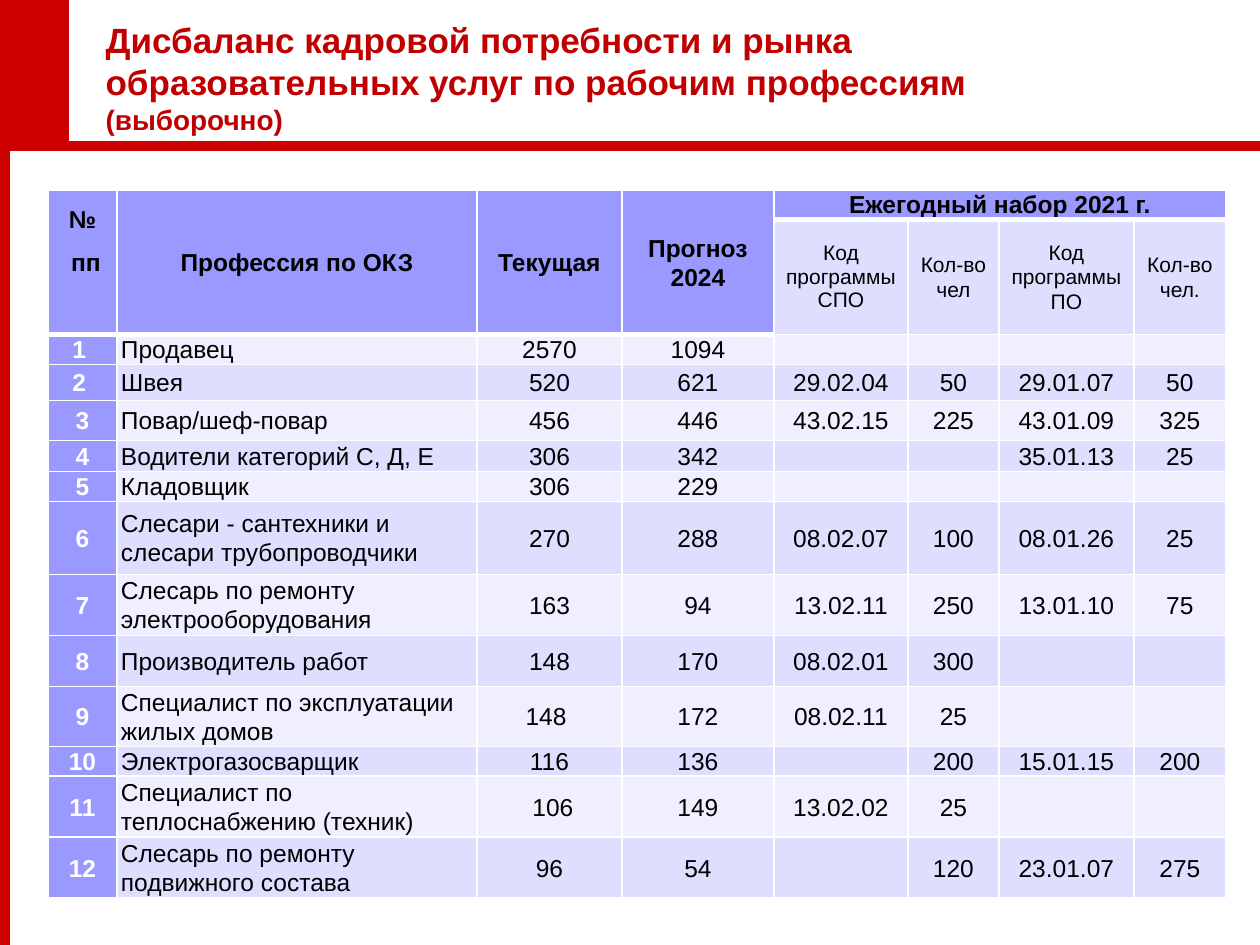
from lxml import etree
from pptx import Presentation
from pptx import util as u
from pptx.dml.color import RGBColor
from pptx.enum import shapes, text
from pptx.oxml.ns import qn


def px(n):
    return u.Emu(round(n * 914400 / 126))


def color(hex_string):
    return RGBColor.from_string(hex_string)


RED, TITLE_RED = "CC0000", "C00000"
HEADER, DARK_BAND, LIGHT_BAND = "9999FF", "DEDEFF", "EFEFFF"
BLACK, WHITE = "000000", "FFFFFF"

presentation = Presentation()
presentation.slide_width, presentation.slide_height = px(1260), px(945)
slide = presentation.slides.add_slide(presentation.slide_layouts[5])

# Red frame: side bar, corner block and rule
for width, height in [(10, 945), (69, 143)]:
    shape = slide.shapes.add_shape(shapes.MSO_SHAPE.RECTANGLE, 0, 0, px(width), px(height))
    shape.shadow.inherit = False
    shape.fill.solid()
    shape.fill.fore_color.rgb = color(RED)
    shape.line.fill.background()
rule = slide.shapes.add_connector(shapes.MSO_CONNECTOR.STRAIGHT, 0, px(146), px(1260), px(146))
rule.line.color.rgb = color(RED)
rule.line.width = u.Pt(6)
etree.SubElement(rule._element.spPr, qn("a:effectLst"))

# Title
title = slide.shapes.title
title.left, title.top, title.width, title.height = px(93), px(14), px(1024), px(166)
frame = title.text_frame
frame.word_wrap = True
frame.auto_size = text.MSO_AUTO_SIZE.NONE
frame.vertical_anchor = text.MSO_ANCHOR.MIDDLE
frame.margin_bottom = px(46)
paragraph = frame.paragraphs[0]
paragraph.alignment = text.PP_ALIGN.LEFT
for words, size in [
    ("Дисбаланс кадровой потребности и рынка образовательных услуг по рабочим профессиям ", 20),
    ("(выборочно)", 16),
]:
    run = paragraph.add_run()
    run.text = words
    run.font.name, run.font.size, run.font.bold = "Arial", u.Pt(size), True
    run.font.color.rgb = color(TITLE_RED)

# Table contents
rows = [
    ["№\n пп", "Профессия по ОКЗ", "Текущая", "Прогноз 2024", "Ежегодный набор 2021 г.", "", "", ""],
    ["", "", "", "", "Код программы СПО", "Кол-во чел", "Код программы ПО", "Кол-во чел."],
    ["1 ", "Продавец", "2570", "1094", "", "", "", ""],
    ["2 ", "Швея", "520", "621", "29.02.04", "50", "29.01.07", "50"],
    ["3", "Повар/шеф-повар", "456", "446", "43.02.15", "225", "43.01.09", "325"],
    ["4", "Водители категорий С, Д, Е", "306", "342", "", "", "35.01.13", "25"],
    ["5", "Кладовщик", "306", "229", "", "", "", ""],
    ["6", "Слесари - сантехники и слесари трубопроводчики", "270", "288",
     "08.02.07", "100", "08.01.26", "25"],
    ["7", "Слесарь по ремонту электрооборудования", "163", "94",
     "13.02.11", "250", "13.01.10", "75"],
    ["8", "Производитель работ", "148", "170", "08.02.01", "300", "", ""],
    ["9", "Специалист по эксплуатации жилых домов", "148 ", "172", "08.02.11", "25", "", ""],
    ["10", "Электрогазосварщик", "116", "136", "", "200", "15.01.15", "200"],
    ["11", "Специалист по теплоснабжению (техник)", " 106", "149", "13.02.02", "25", "", ""],
    ["12", "Слесарь по ремонту подвижного состава", "96", "54", "", "120", "23.01.07", "275"],
]
column_widths = [69, 360, 145, 152, 134, 91, 135, 92]
row_heights = [29, 115, 30, 36, 40, 31, 30, 73, 61, 51, 60, 30, 61, 61]

table = slide.shapes.add_table(
    len(rows), len(column_widths), px(48), px(190), px(sum(column_widths)), px(sum(row_heights))
).table
for column, width in zip(table.columns, column_widths):
    column.width = px(width)
for row, height in zip(table.rows, row_heights):
    row.height = px(height)

# Merged header cells
for c in range(4):
    table.cell(0, c).merge(table.cell(1, c))
table.cell(0, 4).merge(table.cell(0, 7))

# Cell text, fills and borders
for r, values in enumerate(rows):
    for c, value in enumerate(values):
        cell = table.cell(r, c)
        top_header = r == 0 or (r == 1 and c < 4)
        subheader = r == 1 and c >= 4
        number = r > 1 and c == 0

        cell.vertical_anchor = text.MSO_ANCHOR.MIDDLE
        cell.margin_left = cell.margin_right = px(4)
        cell.margin_top = cell.margin_bottom = 0
        cell.fill.solid()
        band = LIGHT_BAND if r % 2 == 0 else DARK_BAND
        cell.fill.fore_color.rgb = color(HEADER if top_header or number else band)

        cell.text = value
        for paragraph in cell.text_frame.paragraphs:
            paragraph.alignment = text.PP_ALIGN.LEFT if r > 1 and c == 1 else text.PP_ALIGN.CENTER
            paragraph.line_spacing = 1.0 if subheader and c == 4 else 1.06
            paragraph.space_after = u.Pt(8)
            font = paragraph.font
            font.name, font.size = "Arial", u.Pt(12 if subheader else 14)
            font.bold = top_header or number
            font.color.rgb = color(WHITE if number else BLACK)
            if not value:
                etree.SubElement(paragraph._p, qn("a:endParaRPr"), sz="1400")

        properties = cell._tc.get_or_add_tcPr()
        for position, side in enumerate(["lnL", "lnR", "lnT", "lnB"]):
            points = 3 if top_header and side == "lnB" else 1
            border = etree.Element(qn(f"a:{side}"), w=str(u.Pt(points)))
            fill = etree.SubElement(border, qn("a:solidFill"))
            etree.SubElement(fill, qn("a:srgbClr"), val=WHITE)
            properties.insert(position, border)

# The number heading sits high in its cell
table.cell(0, 0).margin_bottom = px(43)

presentation.save("out.pptx")
